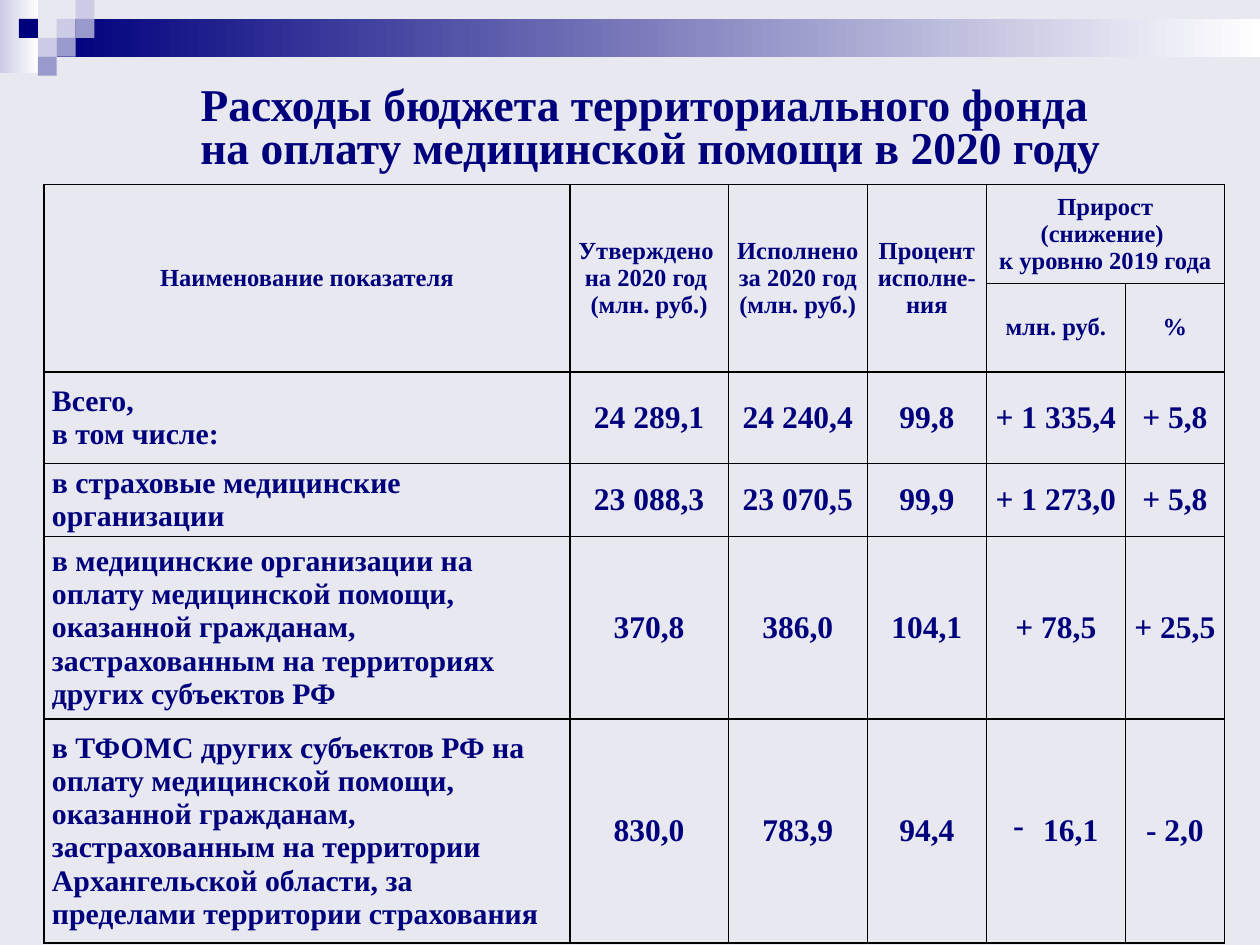
"""Builds a slide with a table of territorial fund spending in 2020."""
import pptx
import pptx.util
import pptx.dml.color
import pptx.enum.shapes
import pptx.enum.text
import pptx.oxml
import pptx.oxml.ns

Pt = pptx.util.Pt
RGBColor = pptx.dml.color.RGBColor
ALIGN = pptx.enum.text.PP_ALIGN
MIDDLE = pptx.enum.text.MSO_ANCHOR.MIDDLE
NAVY = RGBColor(0x00, 0x00, 0x7D)
LILAC = RGBColor(0x99, 0x99, 0xCC)
PALE = RGBColor(0xCC, 0xCC, 0xE6)
WHITE = RGBColor(0xFF, 0xFF, 0xFF)
BACK = RGBColor(0xE8, 0xE8, 0xF1)
BLACK = RGBColor(0x00, 0x00, 0x00)
FONT = "Times New Roman"

TITLE = ["Расходы бюджета территориального фонда",
         " на оплату медицинской помощи в 2020 году"]
HEADERS = [
    (0, 0, 1, 0, ["Наименование показателя"]),
    (0, 1, 1, 1, ["Утверждено ", "на 2020 год ", "(млн. руб.)"]),
    (0, 2, 1, 2, ["Исполнено за 2020 год", "(млн. руб.)"]),
    (0, 3, 1, 3, ["Процент исполне-ния"]),
    (0, 4, 0, 5, ["Прирост (снижение) ", "к уровню 2019 года"]),
    (1, 4, 1, 4, ["млн. руб."]),
    (1, 5, 1, 5, ["%"]),
]
ROWS = [
    (["Всего,", "в том числе:"],
     "24 289,1", "24 240,4", "99,8", "+ 1 335,4", "+ 5,8"),
    (["в страховые медицинские организации"],
     "23 088,3", "23 070,5", "99,9", "+ 1 273,0", "+ 5,8"),
    (["в медицинские организации на оплату медицинской помощи, оказанной "
      "гражданам, застрахованным на территориях других субъектов РФ"],
     "370,8", "386,0", "104,1", "+ 78,5", "+ 25,5"),
    (["в ТФОМС других субъектов РФ на оплату медицинской помощи, оказанной "
      "гражданам, застрахованным на территории Архангельской области, "
      "за пределами территории страхования"],
     "830,0", "783,9", "94,4", "16,1", "- 2,0"),
]
BULLET_CELL = (5, 4)
COL_WIDTHS = [300.5, 90.5, 79.5, 68, 79.5, 56.5]
ROW_HEIGHTS = [56.5, 46.5, 52.5, 41.5, 104.5, 128]
TABLE_LEFT, TABLE_TOP = 25.2, 105.5
BANDS = [(0, 0, 22, 41.8, PALE), (32.4, 10.8, 687.6, 21.6, NAVY)]
TILE = 10.8
TILES = [(3, 1, PALE), (4, 0, PALE), (4, 1, LILAC), (2, 2, PALE),
         (1, 1, NAVY), (3, 2, LILAC), (2, 3, LILAC)]


def add_rect(s, left, top, width, height, color, fade=False):
    sp = s.shapes.add_shape(pptx.enum.shapes.MSO_SHAPE.RECTANGLE,
                            Pt(left), Pt(top), Pt(width), Pt(height))
    sp.shadow.inherit = False
    sp.line.fill.background()
    if fade:
        sp.fill.gradient()
        sp.fill.gradient_angle = 0
        for stop, rgb in zip(sp.fill.gradient_stops, (color, WHITE)):
            stop.color.rgb = rgb
    else:
        sp.fill.solid()
        sp.fill.fore_color.rgb = color


def add_run(p, text, size):
    r = p.add_run()
    r.text = text
    r.font.name, r.font.size, r.font.bold = FONT, Pt(size), True
    r.font.color.rgb = NAVY


def add_borders(cell):
    pr = cell._tc.get_or_add_tcPr()
    for i, side in enumerate(("lnL", "lnR", "lnT", "lnB")):
        pr.insert(i, pptx.oxml.parse_xml(
            f'<a:{side} {pptx.oxml.ns.nsdecls("a")} w="{Pt(1)}"><a:solidFill>'
            f'<a:srgbClr val="{BLACK}"/></a:solidFill></a:{side}>'))


def add_bullet(p, char, indent):
    pr = p._p.get_or_add_pPr()
    pr.set("marL", str(Pt(indent)))
    pr.set("indent", str(-Pt(indent)))
    pr.append(pptx.oxml.parse_xml(
        f'<a:buChar {pptx.oxml.ns.nsdecls("a")} char="{char}"/>'))


def fill_cell(cell, lines, size, align=ALIGN.CENTER):
    tf = cell.text_frame
    for i, line in enumerate(lines):
        p = tf.add_paragraph() if i else tf.paragraphs[0]
        p.alignment = align
        add_run(p, line, size)


def add_title(s):
    tf = s.shapes.add_textbox(Pt(48), Pt(37.5), Pt(641), Pt(73.5)).text_frame
    tf.word_wrap = True
    tf.vertical_anchor = MIDDLE
    p = tf.paragraphs[0]
    p.alignment = ALIGN.CENTER
    p.line_spacing = 0.8
    add_run(p, TITLE[0], 26)
    p.add_line_break()
    add_run(p, TITLE[1], 26)


def add_spending_table(s):
    table = s.shapes.add_table(
        len(ROW_HEIGHTS), len(COL_WIDTHS), Pt(TABLE_LEFT), Pt(TABLE_TOP),
        Pt(sum(COL_WIDTHS)), Pt(sum(ROW_HEIGHTS))).table
    table.first_row = table.horz_banding = False
    for col, width in zip(table.columns, COL_WIDTHS):
        col.width = Pt(width)
    for row, height in zip(table.rows, ROW_HEIGHTS):
        row.height = Pt(height)
    for cell in table.iter_cells():
        cell.fill.background()
        cell.vertical_anchor = MIDDLE
        cell.margin_left = cell.margin_right = Pt(4.5)
        cell.margin_top = cell.margin_bottom = 0
        add_borders(cell)
    for top, left, bottom, right, lines in HEADERS:
        cell = table.cell(top, left)
        if (top, left) != (bottom, right):
            cell.merge(table.cell(bottom, right))
        fill_cell(cell, lines, 14)
    for i, (name, *values) in enumerate(ROWS, 2):
        fill_cell(table.cell(i, 0), name, 17, ALIGN.LEFT)
        for j, value in enumerate(values, 1):
            fill_cell(table.cell(i, j), [value], 18)
    add_bullet(table.cell(*BULLET_CELL).text_frame.paragraphs[0], "-", 17)


def main():
    prs = pptx.Presentation()
    prs.slide_width, prs.slide_height = Pt(720), Pt(540)
    s = prs.slides.add_slide(prs.slide_layouts[6])
    s.background.fill.solid()
    s.background.fill.fore_color.rgb = BACK
    for left, top, width, height, color in BANDS:
        add_rect(s, left, top, width, height, color, fade=True)
    for col, row, color in TILES:
        add_rect(s, col * TILE, row * TILE, TILE, TILE, color)
    add_title(s)
    add_spending_table(s)
    prs.save("out.pptx")


if __name__ == "__main__":
    main()
